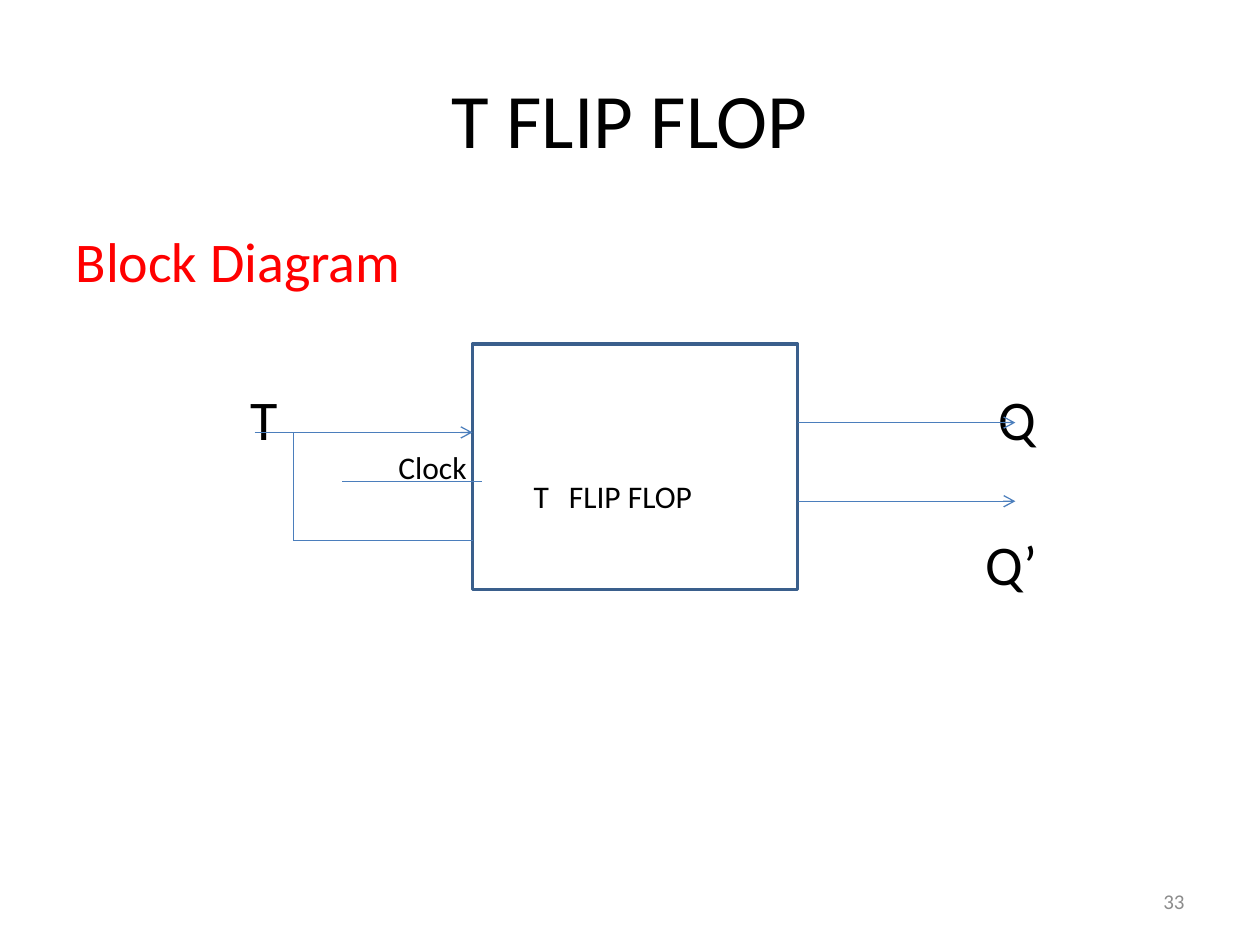
from lxml import etree
from pptx import Presentation
from pptx.dml.color import RGBColor
from pptx.enum.shapes import MSO_CONNECTOR, MSO_SHAPE
from pptx.enum.text import MSO_ANCHOR, PP_ALIGN
from pptx.oxml.ns import qn
from pptx.util import Inches, Pt

STRAIGHT = MSO_CONNECTOR.STRAIGHT
RECTANGLE = MSO_SHAPE.RECTANGLE
LEFT, CENTER, RIGHT = PP_ALIGN.LEFT, PP_ALIGN.CENTER, PP_ALIGN.RIGHT
MIDDLE, BOTTOM, TOP = MSO_ANCHOR.MIDDLE, MSO_ANCHOR.BOTTOM, MSO_ANCHOR.TOP
FONT = "Calibri"
BLACK, RED, GRAY, WHITE = "000000", "FF0000", "8C8C8C", "FFFFFF"
WIRE, BORDER = "4B7EBC", "3A5F8C"


def color(value):
    return RGBColor.from_string(value)


def within(box, left, top, width, height):
    """Turn shares of a box into a box of lengths in inches."""
    x, y, w, h = box
    return x + left * w, y + top * h, width * w, height * h


def place(shape, box):
    shape.left, shape.top, shape.width, shape.height = map(Inches, box)


def format_paragraph(paragraph, size, text_color, align=LEFT):
    paragraph.alignment = align
    for run in paragraph.runs:
        run.font.name = FONT
        run.font.size = Pt(size)
        run.font.color.rgb = color(text_color)


def set_tab(paragraph, stop):
    tab_list = etree.SubElement(paragraph._p.get_or_add_pPr(), qn("a:tabLst"))
    etree.SubElement(tab_list, qn("a:tab"), pos=str(Inches(stop)), algn="l")


def add_label(slide, box, text, size, text_color=BLACK, align=LEFT, anchor=TOP, tab=None):
    text_frame = slide.shapes.add_textbox(*map(Inches, box)).text_frame
    text_frame.word_wrap = True
    text_frame.vertical_anchor = anchor
    text_frame.text = text
    paragraph = text_frame.paragraphs[0]
    if tab:
        set_tab(paragraph, tab)
    format_paragraph(paragraph, size, text_color, align)


def add_title(slide, box, text):
    title = slide.shapes.title
    place(title, box)
    title.text_frame.text = text
    title.text_frame.vertical_anchor = MIDDLE
    format_paragraph(title.text_frame.paragraphs[0], 44, BLACK, CENTER)


def add_heading(slide, box, text):
    body = slide.placeholders[1]
    place(body, box)
    body.text_frame.text = text
    paragraph = body.text_frame.paragraphs[0]
    properties = paragraph._p.get_or_add_pPr()
    properties.set("marL", "0")
    properties.set("indent", "0")
    etree.SubElement(properties, qn("a:buNone"))
    paragraph.space_before = Pt(0)
    format_paragraph(paragraph, 32, RED)


def add_wire(slide, box, start, end, arrow):
    x1, y1, _, _ = within(box, *start, 0, 0)
    x2, y2, _, _ = within(box, *end, 0, 0)
    wire = slide.shapes.add_connector(STRAIGHT, *map(Inches, (x1, y1, x2, y2)))
    wire.line.color.rgb = color(WIRE)
    wire.line.width = Pt(0.75)
    if arrow:
        etree.SubElement(wire.line._get_or_add_ln(), qn("a:tailEnd"), type="arrow")
    etree.SubElement(wire._element.spPr, qn("a:effectLst"))


def add_flip_flop(slide, box):
    """Draw the block in its box; signals and wires are in shares of it."""
    block = slide.shapes.add_shape(RECTANGLE, *map(Inches, box))
    block.shadow.inherit = False
    block.fill.solid()
    block.fill.fore_color.rgb = color(WHITE)
    block.line.color.rgb = color(BORDER)
    block.line.width = Pt(2)
    add_label(slide, within(box, 0.15, 0.2, 0.7, 0.52), "T\tFLIP FLOP", 18,
              anchor=BOTTOM, tab=0.28)
    add_label(slide, within(box, -0.55, 0.4, 0.57, 0.2), "Clock", 18, align=RIGHT)

    for name, left, top in (("T", -0.72, 0.14), ("Q", 1.58, 0.14), ("Q’", 1.54, 0.73)):
        add_label(slide, within(box, left, top, 0.3, 0.33), name, 32)

    reach, branch = 0.67, -0.55
    input_row, loop_row = 0.36, 0.8
    wires = [
        ((-reach, input_row), (0, input_row), True),
        ((branch, input_row), (branch, loop_row), False),
        ((branch, loop_row), (0, loop_row), False),
        ((-0.4, 0.56), (0.03, 0.56), False),
    ]
    wires += [((1, row), (1 + reach, row), True) for row in (0.32, 0.64)]
    for start, end, arrow in wires:
        add_wire(slide, box, start, end, arrow)


def main():
    presentation = Presentation()
    presentation.slide_width, presentation.slide_height = Inches(10), Inches(7.5)
    slide = presentation.slides.add_slide(presentation.slide_layouts[1])
    page = (0, 0, 10, 7.5)
    add_title(slide, within(page, 0.05, 0.04, 0.9, 0.17), "T FLIP FLOP")
    add_heading(slide, (0.5, 1.75, 9, 4.95), "Block Diagram")
    add_flip_flop(slide, (3.75, 2.73, 2.58, 1.95))
    add_label(slide, (7.17, 6.95, 2.33, 0.4), "33", 12, GRAY, RIGHT, MIDDLE)
    presentation.save("out.pptx")


if __name__ == "__main__":
    main()
